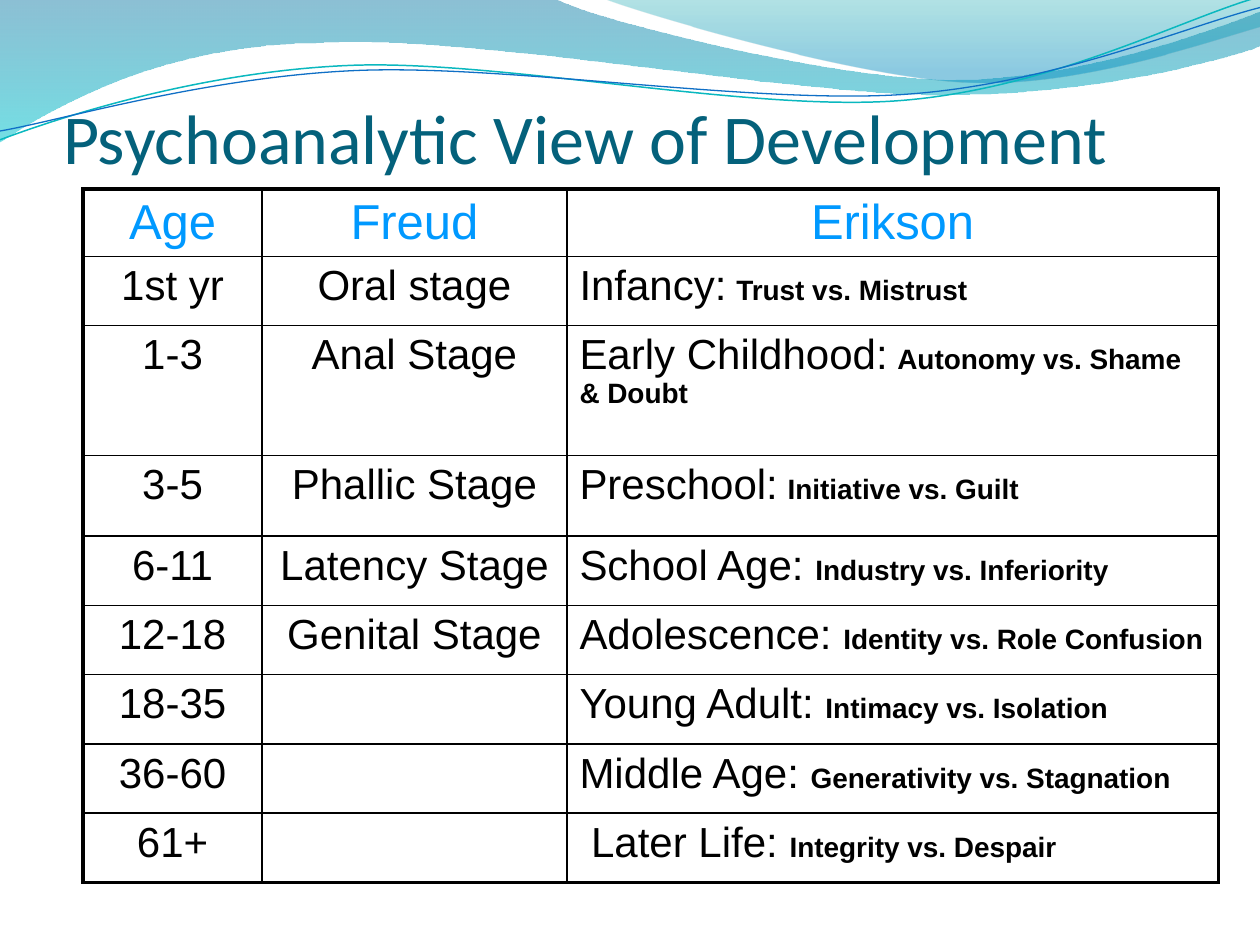
"""Build a slide comparing the Freud and Erikson stages of development."""
from lxml.etree import SubElement
from pptx import Presentation
from pptx.dml.color import RGBColor
from pptx.enum.text import MSO_ANCHOR, PP_ALIGN
from pptx.oxml.ns import qn
from pptx.util import Inches, Pt

BLACK = RGBColor(0x00, 0x00, 0x00)
HEADING = RGBColor(0x00, 0x99, 0xFF)
TITLE = RGBColor(0x04, 0x61, 0x7B)
BLUE = RGBColor(0x00, 0x74, 0xA1)
CYAN = RGBColor(0x00, 0xC6, 0xCF)
TEAL = RGBColor(0x00, 0xA1, 0xA9)
SKY = RGBColor(0x00, 0x8B, 0xBF)
TEAL_LINE = RGBColor(0x0A, 0xB8, 0xBF)
BLUE_LINE = RGBColor(0x0F, 0x6F, 0xC6)

HEADERS = ["Age", "Freud", "Erikson"]
STAGES = [
    ("1st yr", "Oral stage", "Infancy:", "Trust vs. Mistrust"),
    ("1-3", "Anal Stage", "Early Childhood:", "Autonomy vs. Shame & Doubt"),
    ("3-5", "Phallic Stage", "Preschool:", "Initiative vs. Guilt"),
    ("6-11", "Latency Stage", "School Age: ", "Industry vs. Inferiority"),
    ("12-18", "Genital Stage", "Adolescence: ", "Identity vs. Role Confusion"),
    ("18-35", "", "Young Adult: ", "Intimacy vs. Isolation"),
    ("36-60", "", "Middle Age: ", "Generativity vs. Stagnation"),
    ("61+", "", " Later Life: ", "Integrity vs. Despair"),
]
COLUMNS = [1.42, 2.42, 5.17]
ROWS = [0.5, 0.55, 1.03, 0.64] + [0.55] * 5

WAVES = [
    ([(0, -0.01), (4.4, -0.01), (4.76, 0.17, 6.64, 0.63, 7.58, 0.63),
      (8.53, 0.63, 9.58, 0.26, 10, 0.09), (10.01, 0.36),
      (9.83, 0.44, 8.7, 0.76, 7.46, 0.75), (6.22, 0.75, 3.82, 0.28, 2.57, 0.34),
      (1.29, 0.35, 0.46, 0.83, -0.01, 1.13), (0, -0.01)],
     [(0, BLUE, 45), (1, CYAN, 55)]),
    ([(4.79, -0.01), (5.09, 0.11, 6.82, 0.62, 7.69, 0.65),
      (8.56, 0.69, 9.61, 0.32, 10, 0.21), (10, 0), (4.79, -0.01)],
     [(0, TEAL, 30), (0.8, SKY, 45)]),
]
CURVES = [
    ([(0, 1.11), (0.48, 0.93, 1.58, 0.57, 2.77, 0.52),
      (3.95, 0.47, 5.93, 0.89, 7.13, 0.8), (8.33, 0.71, 9.38, 0.15, 9.98, -0.02)],
     TEAL_LINE, 0.85),
    ([(0, 1.04), (0.47, 0.96, 1.64, 0.61, 2.83, 0.56),
      (4.03, 0.51, 5.97, 0.83, 7.17, 0.75), (8.36, 0.67, 9.41, 0.21, 10, 0.06)],
     BLUE_LINE, 0.75),
]


def add_outline(slide, segments, close):
    points = [(Inches(segment[i]), Inches(segment[i + 1]))
              for segment in segments for i in range(0, len(segment), 2)]
    builder = slide.shapes.build_freeform(*points[0])
    builder.add_line_segments(points[1:], close=close)
    shape = builder.convert_to_shape()
    shape.shadow.inherit = False
    lines = iter(list(shape.element.spPr.iter(qn("a:lnTo"))))
    for segment in segments[1:]:
        steps = [next(lines) for _ in range(len(segment) // 2)]
        if len(steps) == 3:
            outline = steps[0].getparent()
            curve = SubElement(outline, qn("a:cubicBezTo"))
            outline.replace(steps[0], curve)
            for step in steps:
                curve.append(step[0])
            for step in steps[1:]:
                outline.remove(step)
    return shape


def add_waves(slide):
    for segments, stops in WAVES:
        shape = add_outline(slide, segments, True)
        shape.line.fill.background()
        shape.fill.gradient()
        shape.fill.gradient_angle = 270
        for stop, (position, color, _) in zip(shape.fill.gradient_stops, stops):
            stop.position = position
            stop.color.rgb = color
        colors = shape.element.spPr.iter(qn("a:srgbClr"))
        for color, (_, _, opacity) in zip(list(colors), stops):
            SubElement(color, qn("a:alpha"), val=str(opacity * 1000))
    for segments, color, width in CURVES:
        shape = add_outline(slide, segments, False)
        shape.fill.background()
        shape.line.color.rgb = color
        shape.line.width = Pt(width)


def add_title(slide):
    title = slide.shapes.title
    title.left, title.top, title.width, title.height = map(Inches, (0.5, 0.17, 9, 1.25))
    frame = title.text_frame
    frame.text = "Psychoanalytic View of Development"
    frame.vertical_anchor = MSO_ANCHOR.BOTTOM
    frame.margin_left = frame.margin_right = frame.margin_bottom = 0
    frame.paragraphs[0].alignment = PP_ALIGN.LEFT
    style_run(frame.paragraphs[0].runs[0], 40, TITLE, font="Calibri")


def style_run(run, size, color=BLACK, bold=False, font="Arial"):
    run.font.name = font
    run.font.size = Pt(size)
    run.font.bold = bold
    run.font.color.rgb = color


def set_borders(cell, outer_sides):
    properties = cell._tc.get_or_add_tcPr()
    for side in "LRTB":
        width = Pt(2.25 if side in outer_sides else 1)
        line = SubElement(properties, qn(f"a:ln{side}"), w=str(width))
        fill = SubElement(line, qn("a:solidFill"))
        SubElement(fill, qn("a:srgbClr"), val=str(BLACK))


def fill_cell(cell, parts, centered):
    paragraph = cell.text_frame.paragraphs[0]
    paragraph.alignment = PP_ALIGN.CENTER if centered else PP_ALIGN.LEFT
    spacing = SubElement(paragraph._p.get_or_add_pPr(), qn("a:spcBef"))
    SubElement(spacing, qn("a:spcPct"), val="20000")
    for text, size, color, bold in parts:
        run = paragraph.add_run()
        run.text = text
        style_run(run, size, color, bold)


def stage_parts(age, freud, stage, conflict):
    gap = [] if stage.endswith(" ") else [(" ", 20, BLACK, False)]
    erikson = [(stage, 24, BLACK, False), *gap, (conflict, 16, BLACK, True)]
    return [[(age, 24, BLACK, False)], [(freud, 24, BLACK, False)] if freud else [], erikson]


def add_stage_table(slide):
    table = slide.shapes.add_table(len(ROWS), len(COLUMNS), Inches(0.66), Inches(1.5),
                                   Inches(sum(COLUMNS)), Inches(sum(ROWS))).table
    table.first_row = table.horz_banding = False
    for column, width in zip(table.columns, COLUMNS):
        column.width = Inches(width)
    for row, height in zip(table.rows, ROWS):
        row.height = Inches(height)
    content = [[[(header, 28, HEADING, False)] for header in HEADERS]]
    content += [stage_parts(*stage) for stage in STAGES]
    last_row, last_column = len(ROWS) - 1, len(COLUMNS) - 1
    for r, row_parts in enumerate(content):
        for c, parts in enumerate(row_parts):
            cell = table.cell(r, c)
            edges = {"L": c == 0, "R": c == last_column, "T": r == 0, "B": r == last_row}
            set_borders(cell, [side for side, outer in edges.items() if outer])
            cell.fill.background()
            if parts:
                fill_cell(cell, parts, r == 0 or c < last_column)


def main():
    presentation = Presentation()
    presentation.slide_width, presentation.slide_height = Inches(10), Inches(7.5)
    slide = presentation.slides.add_slide(presentation.slide_layouts[5])
    add_waves(slide)
    add_title(slide)
    add_stage_table(slide)
    presentation.save("out.pptx")


if __name__ == "__main__":
    main()
